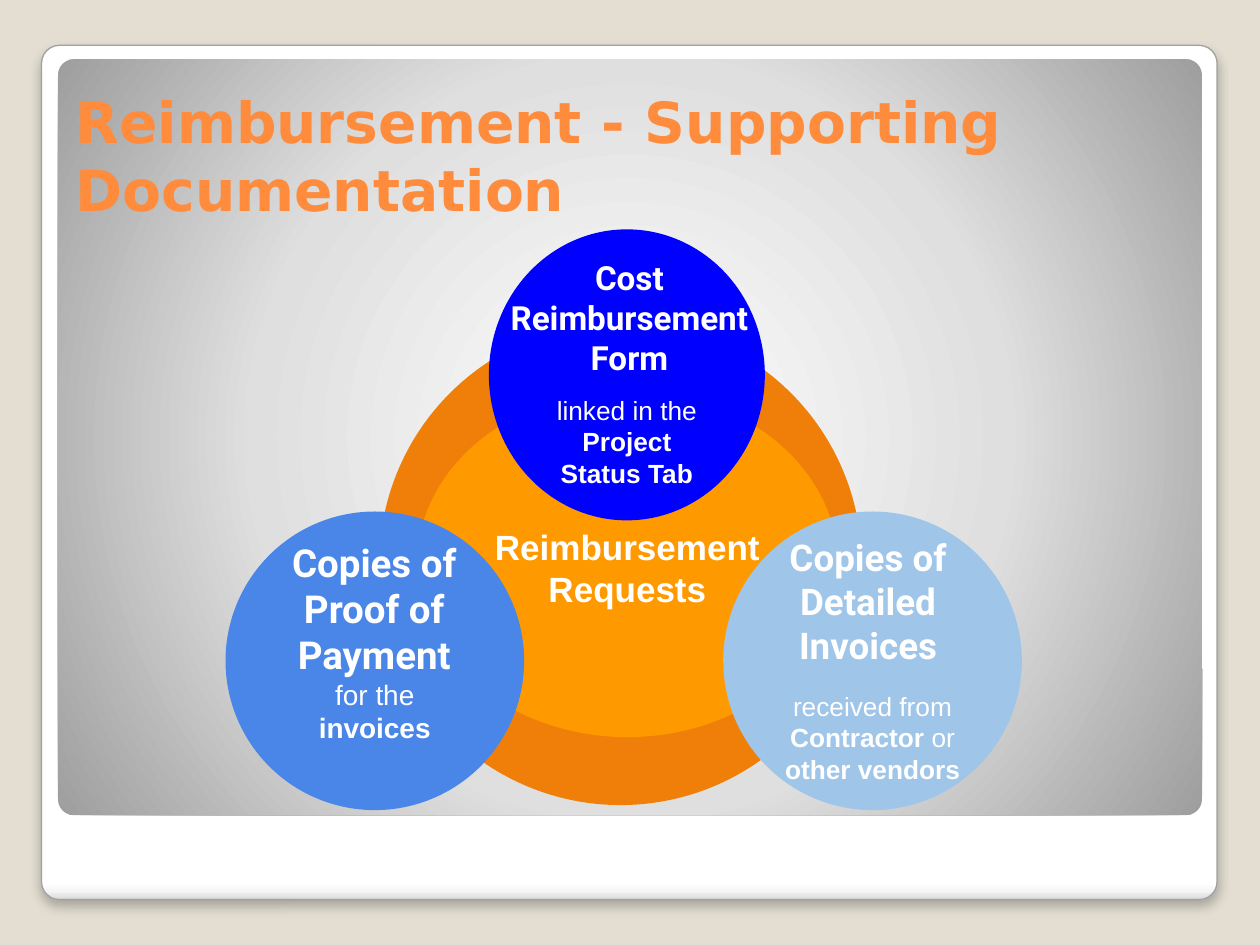
from lxml import etree
from pptx import Presentation, util as u
from pptx.dml.color import RGBColor
from pptx.enum import shapes, text
from pptx.oxml import ns

COLORS = {
    "backdrop": "E3DED1", "edge": "A2A0A0", "title": "FF8C3C",
    "ring": "F07F09", "core": "FF9900", "white": "FFFFFF",
    "form": "0000FF", "invoices": "9FC5E8", "payment": "4A86E8",
}
PANEL_RADIUS = 0.021

deck = Presentation()
deck.slide_width, deck.slide_height = u.Inches(10), u.Inches(7.5)
CELL = deck.slide_width / 10  # grid of 10 columns by 7.5 rows
page = deck.slides.add_slide(deck.slide_layouts[5])
page.background.fill.solid()
page.background.fill.fore_color.rgb = RGBColor.from_string(COLORS["backdrop"])


def add_box(parent, kind, area, color=None):
    """Add a preset shape, or a text box when kind is None."""
    left, top, width, height = (round(CELL * n) for n in area)
    if kind is None:
        box = parent.add_textbox(left, top, width, height)
    else:
        box = parent.add_shape(kind, left, top, width, height)
        box.shadow.inherit = False
        box.line.fill.background()
        if color:
            box.fill.solid()
            box.fill.fore_color.rgb = RGBColor.from_string(COLORS[color])
    return box


def write(box, paragraphs, font, size, color="white", top=0.1,
          anchor=text.MSO_ANCHOR.MIDDLE, align=text.PP_ALIGN.CENTER):
    """Fill a box with paragraphs, each a list of (words, bold) runs."""
    frame = box.text_frame
    frame.word_wrap = True
    frame.auto_size = text.MSO_AUTO_SIZE.NONE
    frame.vertical_anchor = anchor
    frame.margin_left = frame.margin_right = u.Inches(0.1)
    frame.margin_top, frame.margin_bottom = u.Inches(top), u.Inches(0.05)
    for index, runs in enumerate(paragraphs):
        para = frame.add_paragraph() if index else frame.paragraphs[0]
        para.alignment = align
        for words, bold in runs:
            span = para.add_run()
            span.text = words
            span.font.name, span.font.size = font, u.Pt(size)
            span.font.bold = bold
            span.font.color.rgb = RGBColor.from_string(COLORS[color])


# Card and the grey panel on it, both with gradients
panels = [
    ((0.33, 0.36, 9.33, 6.78),
     [(0, "FFFFFF"), (98, "FFFFFF"), (99, "F6F6F6"), (100, "D8D8D8")],
     '<a:lin ang="5400000" scaled="0"/>'),
    ((0.46, 0.47, 9.08, 6),
     [(0, "FFFFFF"), (55, "DFDFDF"), (100, "9E9E9E")],
     '<a:path path="circle"><a:fillToRect l="50000" t="50000" r="50000" b="50000"/></a:path>'),
]
cards = []
for area, stops, direction in panels:
    panel = add_box(page.shapes, shapes.MSO_SHAPE.ROUNDED_RECTANGLE, area)
    panel.adjustments[0] = PANEL_RADIUS
    stop_xml = "".join(
        f'<a:gs pos="{share * 1000}"><a:srgbClr val="{color}"/></a:gs>'
        for share, color in stops)
    gradient = etree.fromstring(
        f'<a:gradFill {ns.nsdecls("a")} rotWithShape="1">'
        f'<a:gsLst>{stop_xml}</a:gsLst>{direction}</a:gradFill>')
    panel.element.spPr.find(ns.qn("a:prstGeom")).addnext(gradient)
    cards.append(panel)

# Card outline and soft shadow
card = cards[0]
card.line.color.rgb = RGBColor.from_string(COLORS["edge"])
card.line.width = u.Pt(0.75)
card.element.spPr.find(ns.qn("a:effectLst")).append(etree.fromstring(
    f'<a:outerShdw {ns.nsdecls("a")} blurRad="{u.Pt(6)}" dist="{u.Pt(4)}" '
    'dir="5400000" algn="t" rotWithShape="0"><a:srgbClr val="000000">'
    '<a:alpha val="25000"/></a:srgbClr></a:outerShdw>'))

# Ring behind the title
OVAL = shapes.MSO_SHAPE.OVAL
add_box(page.shapes, OVAL, (3.01, 2.56, 3.83, 3.83), "ring")

# Title, brought in front of the panels
title = page.shapes.title
title.left, title.top, title.width, title.height = (
    round(CELL * n) for n in (0.5, 0.67, 8.95, 1.15))
write(title, [[("Reimbursement - Supporting Documentation", True)]],
      "DejaVu Sans", 32.4, "title", top=0.05,
      anchor=text.MSO_ANCHOR.BOTTOM, align=text.PP_ALIGN.LEFT)
title.element.getparent().append(title.element)

# Centre of the diagram
core = add_box(page.shapes, OVAL, (3.31, 3.1, 3.34, 2.75), "core")
write(core, [[("Reimbursement ", True)], [("Requests", True)]], "Arial", 20)

# Document circles: colour, circle area, detail inset, detail size and runs,
# then heading area, size and words
documents = [
    ("form", (3.88, 1.82, 2.19, 2.31), 0.97, 15,
     [("linked in the ", False), ("Project Status Tab", True)],
     (3.9, 2.01, 2.19, 0.97), 19, "Cost Reimbursement Form"),
    ("invoices", (5.74, 4.06, 2.37, 2.37), 1.07, 15,
     [("received from ", False), ("Contractor", True), (" or ", False),
      ("other vendors", True)],
     (5.76, 4.22, 2.26, 1.04), 21, "Copies of Detailed Invoices"),
    ("payment", (1.79, 4.06, 2.37, 2.37), 0.97, 16,
     [("for the ", False), ("invoices", True)],
     (2, 4.31, 1.94, 0.98), 22, "Copies of Proof of Payment"),
]
for color, area, inset, size, detail, heading_area, heading_size, heading in documents:
    group = page.shapes.add_group_shape()
    circle = add_box(group.shapes, OVAL, area, color)
    write(circle, [detail], "Arial", size, top=inset, anchor=text.MSO_ANCHOR.TOP)
    label = add_box(group.shapes, None, heading_area)
    write(label, [[(heading, True)]], "Roboto", heading_size)

deck.save("out.pptx")
